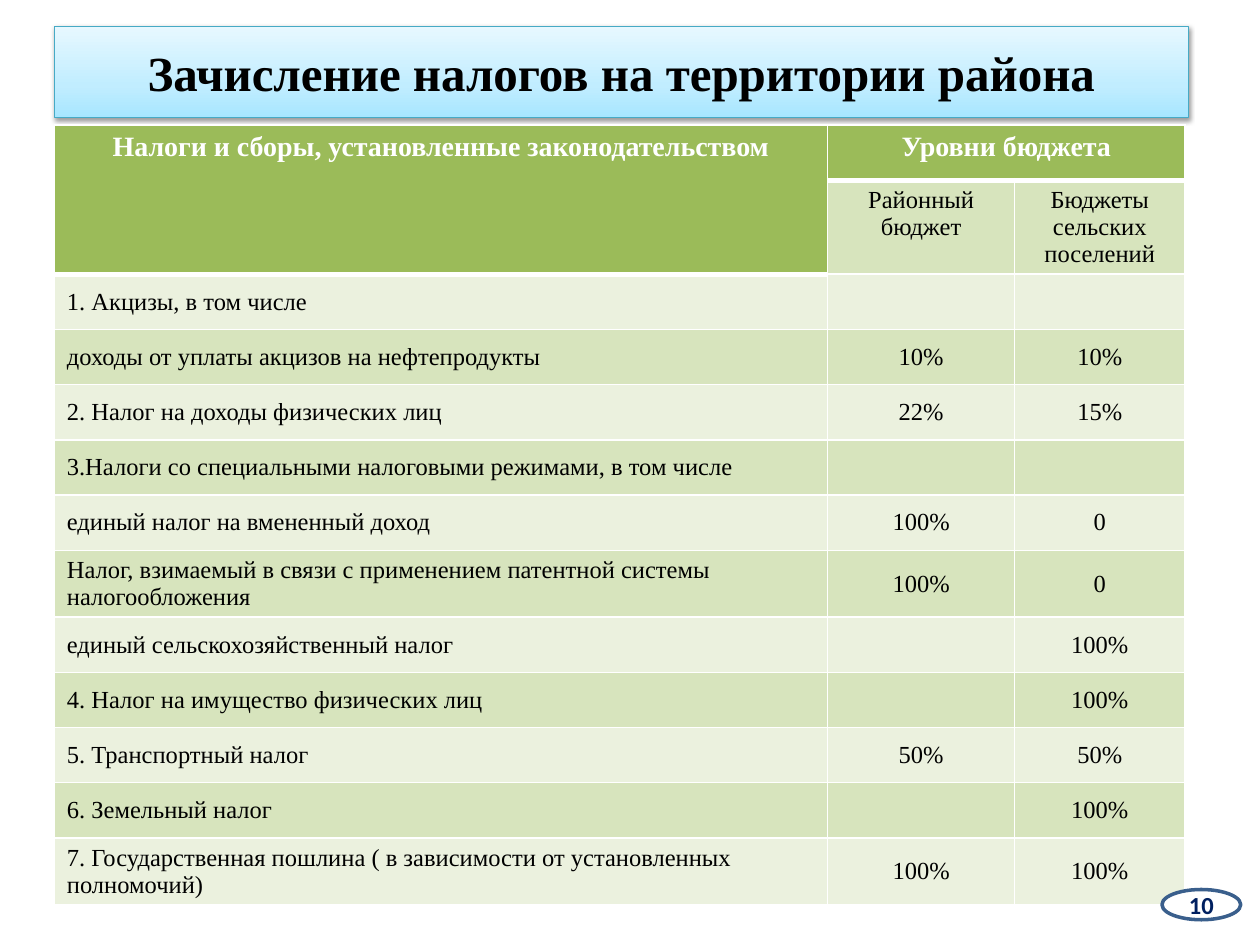
from copy import deepcopy

from pptx import Presentation
from pptx import util as u
from pptx.dml.color import RGBColor
from pptx.enum import shapes, text
from pptx.oxml import parse_xml
from pptx.oxml.ns import nsdecls, qn

Pt = u.Pt
TITLE = "Зачисление налогов на территории района"
HEADERS = [
    ("Налоги и сборы, установленные законодательством", "Уровни бюджета", ""),
    ("", "Районный бюджет", "Бюджеты сельских поселений"),
]
TAXES = [
    ("1. Акцизы, в том числе", "", ""),
    ("доходы от уплаты акцизов на нефтепродукты", "10%", "10%"),
    ("2. Налог на доходы физических лиц", "22%", "15%"),
    ("3.Налоги со специальными налоговыми режимами, в том числе", "", ""),
    ("единый налог на вмененный доход", "100%", "0"),
    ("Налог, взимаемый в связи с применением патентной системы налогообложения", "100%", "0"),
    ("единый сельскохозяйственный налог", "", "100%"),
    ("4. Налог на имущество физических лиц", "", "100%"),
    ("5. Транспортный налог", "50%", "50%"),
    ("6. Земельный налог", "", "100%"),
    ("7. Государственная пошлина ( в зависимости от установленных полномочий)", "100%", "100%"),
]
PAGE_NUMBER = "10"

COLORS = {
    "header": "9BBB59", "band": "D7E4BD", "light": "EBF1DE",
    "white": "FFFFFF", "black": "000000", "title_line": "46AAC5",
    "badge_line": "3A5F8C", "badge_text": "002060",
}
TITLE_STOPS = [(0, "A7E6FF"), (0.35, "C1EDFF"), (1, "E7F8FF")]
SERIF = "Times New Roman"
TITLE_FONT = {"name": SERIF, "size": Pt(28), "bold": True}
HEADER_FONT = {"name": SERIF, "size": Pt(16), "bold": True}
BODY_FONT = {"name": SERIF, "size": Pt(14), "bold": False}
BADGE_FONT = {"name": "Calibri", "size": Pt(14), "bold": True}

LEFT = 31
COLUMN_WIDTHS = [442, 106.8, 97.4]
ROW_HEIGHT = 31.55
SUBHEADER_HEIGHT = 47.3


def rgb(color):
    return RGBColor.from_string(COLORS[color])


def write(frame, words, font, color, align, anchor):
    frame.text = words
    frame.word_wrap = True
    frame.vertical_anchor = anchor
    paragraph = frame.paragraphs[0]
    paragraph.alignment = align
    for run in paragraph.runs:
        for key, value in font.items():
            setattr(run.font, key, value)
        run.font.color.rgb = rgb(color)


def set_borders(cell, top, bottom):
    sides = [("lnL", 1), ("lnR", 1), ("lnT", top), ("lnB", bottom)]
    properties = cell._tc.get_or_add_tcPr()
    for index, (side, width) in enumerate(sides):
        properties.insert(index, parse_xml(
            f'<a:{side} {nsdecls("a")} w="{Pt(width)}"><a:solidFill>'
            f'<a:srgbClr val="{COLORS["white"]}"/></a:solidFill></a:{side}>'))


def add_title(slide):
    title = slide.shapes.title
    place = {"left": Pt(LEFT), "top": Pt(15), "width": Pt(648), "height": Pt(52)}
    for key, value in place.items():
        setattr(title, key, value)
    title.fill.gradient()
    title.fill.gradient_angle = 90
    stops = title._element.spPr.find(".//" + qn("a:gsLst"))
    stops.insert(1, deepcopy(stops[0]))
    for stop, (position, color) in zip(title.fill.gradient_stops, TITLE_STOPS):
        stop.position = position
        stop.color.rgb = RGBColor.from_string(color)
    title.line.color.rgb = rgb("title_line")
    title.line.width = Pt(0.75)
    title._element.spPr.append(parse_xml(
        f'<a:effectLst {nsdecls("a")}><a:outerShdw blurRad="{Pt(3.1)}" '
        f'dist="{Pt(1.6)}" dir="5400000" rotWithShape="0"><a:srgbClr val="{COLORS["black"]}">'
        '<a:alpha val="38000"/></a:srgbClr></a:outerShdw></a:effectLst>'))
    write(title.text_frame, TITLE, TITLE_FONT, "black",
          text.PP_ALIGN.CENTER, text.MSO_ANCHOR.MIDDLE)


def add_taxes(slide):
    rows = HEADERS + TAXES
    heights = [ROW_HEIGHT] * len(rows)
    heights[1] = SUBHEADER_HEIGHT
    table = slide.shapes.add_table(
        len(rows), len(COLUMN_WIDTHS), Pt(LEFT), Pt(71.5),
        Pt(sum(COLUMN_WIDTHS)), Pt(sum(heights))).table
    for column, width in zip(table.columns, COLUMN_WIDTHS):
        column.width = Pt(width)
    for row, height in zip(table.rows, heights):
        row.height = Pt(height)
    table.cell(0, 0).merge(table.cell(1, 0))
    table.cell(0, 1).merge(table.cell(0, 2))

    for r, row in enumerate(rows):
        for c, words in enumerate(row):
            cell = table.cell(r, c)
            is_header = r == 0 or (r == 1 and c == 0)
            below_header = r == (2 if c == 0 else 1)
            is_tax = r >= len(HEADERS)
            fill = "header" if is_header else "band" if r % 2 else "light"
            cell.fill.solid()
            cell.fill.fore_color.rgb = rgb(fill)
            set_borders(cell, 3 if below_header else 1, 3 if is_header else 1)
            anchor = text.MSO_ANCHOR.MIDDLE if is_tax else text.MSO_ANCHOR.TOP
            cell.vertical_anchor = anchor
            if words:
                write(cell.text_frame, words,
                      HEADER_FONT if is_header else BODY_FONT,
                      "white" if is_header else "black",
                      text.PP_ALIGN.LEFT if is_tax and c == 0 else text.PP_ALIGN.CENTER,
                      anchor)


def add_page_badge(slide):
    badge = slide.shapes.add_shape(
        shapes.MSO_SHAPE.OVAL, Pt(664), Pt(508.3), Pt(45), Pt(17.3))
    badge.shadow.inherit = False
    badge.fill.solid()
    badge.fill.fore_color.rgb = rgb("white")
    badge.line.color.rgb = rgb("badge_line")
    badge.line.width = Pt(2)
    for side in ("left", "top", "right", "bottom"):
        setattr(badge.text_frame, f"margin_{side}", 0)
    write(badge.text_frame, PAGE_NUMBER, BADGE_FONT, "badge_text",
          text.PP_ALIGN.CENTER, text.MSO_ANCHOR.MIDDLE)


def main():
    deck = Presentation()
    deck.slide_width, deck.slide_height = Pt(720), Pt(540)
    slide = deck.slides.add_slide(deck.slide_layouts[5])
    add_title(slide)
    add_taxes(slide)
    add_page_badge(slide)
    deck.save("out.pptx")


if __name__ == "__main__":
    main()
